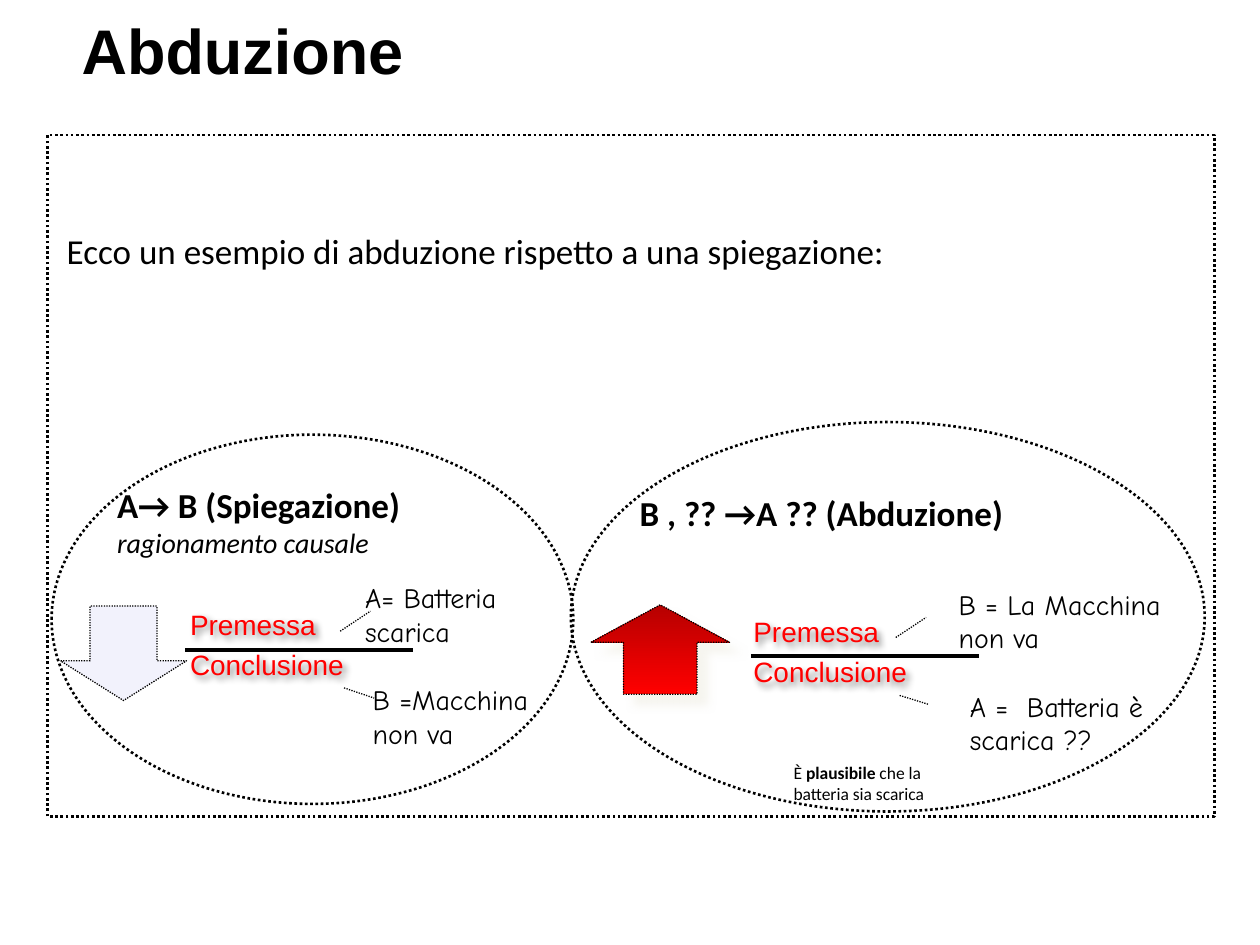
"""Build the slide that compares explanation and abduction."""
from lxml.etree import SubElement
from pptx import Presentation
from pptx.dml.color import RGBColor
from pptx.enum.dml import MSO_LINE_DASH_STYLE as Dash
from pptx.enum.shapes import MSO_CONNECTOR as Connector, MSO_SHAPE as Shape
from pptx.oxml.ns import qn
from pptx.util import Pt

BLACK = RGBColor(0x00, 0x00, 0x00)
WHITE = RGBColor(0xFF, 0xFF, 0xFF)
RED = RGBColor(0xFF, 0x00, 0x00)
DARK_RED = RGBColor(0xB6, 0x00, 0x00)
BLUE = RGBColor(0x00, 0x00, 0xCC)
CREAM = RGBColor(0xEE, 0xEC, 0xE1)

HEADING, BODY, HAND = "Arial", "Calibri", "Comic Neue"


class Board:
    def __init__(self, slide):
        self.shapes = slide.shapes

    def shadow(self, shape, color, alpha, blur, distance):
        shape.shadow.inherit = False
        effects = shape._element.spPr.find(qn("a:effectLst"))
        outer = SubElement(effects, qn("a:outerShdw"), blurRad=str(Pt(blur)),
                           dist=str(Pt(distance)), dir="2700000", algn="ctr", rotWithShape="0")
        tint = SubElement(outer, qn("a:srgbClr"), val=str(color))
        SubElement(tint, qn("a:alpha"), val=str(alpha * 1000))

    def outlined(self, kind, box, width=1.5, fill=None, alpha=100):
        shape = self.shapes.add_shape(kind, *map(Pt, box))
        shape.shadow.inherit = False
        shape.line.color.rgb = BLACK
        shape.line.width = Pt(width)
        shape.line.dash_style = Dash.ROUND_DOT
        if fill is None:
            shape.fill.background()
        else:
            shape.fill.solid()
            shape.fill.fore_color.rgb = fill
            tint = shape._element.spPr.find(qn("a:solidFill"))[0]
            SubElement(tint, qn("a:alpha"), val=str(alpha * 1000))
        return shape

    def arrow(self, kind, box, fill=None, alpha=100):
        arrow = self.outlined(kind, box, 0.75, fill, alpha)
        arrow.adjustments[0], arrow.adjustments[1] = 0.53, 0.42
        return arrow

    def line(self, start, end, width=0.75, dash=Dash.ROUND_DOT):
        line = self.shapes.add_connector(Connector.STRAIGHT, *map(Pt, start + end))
        line.line.color.rgb = BLACK
        line.line.width = Pt(width)
        line.line.dash_style = dash
        SubElement(line._element.spPr, qn("a:effectLst"))

    def text(self, box, lines, size, font, color=BLACK, bold=None, space=0):
        """Write lines of text, with the parts between ** marks in bold."""
        label = self.shapes.add_textbox(*map(Pt, box))
        frame = label.text_frame
        frame.word_wrap = True
        for index, content in enumerate(lines):
            paragraph = frame.add_paragraph() if index else frame.paragraphs[0]
            paragraph.space_before = Pt(space)
            paragraph.font.size = Pt(size)
            paragraph.font.name = font
            paragraph.font.color.rgb = color
            paragraph.font.bold = bold
            for part, words in enumerate(content.split("**")):
                run = paragraph.add_run()
                run.text = words
                if part % 2:
                    run.font.bold = True
        return label

    def inference(self, left, top, bar_left, bar_top):
        self.line((bar_left, bar_top), (bar_left + 130.3, bar_top), 2.25, Dash.SOLID)
        steps = self.text((left, top, 215, 79), ["Premessa", "Conclusione"],
                          16, HEADING, RED, space=3.7)
        self.shadow(steps, BLACK, 50, 4, 3)

    def note(self, left, top, width, words):
        self.text((left, top, width, 46), [words], 16, HAND)


def main():
    deck = Presentation()
    deck.slide_width, deck.slide_height = Pt(720), Pt(540)
    board = Board(deck.slides.add_slide(deck.slide_layouts[6]))

    board.outlined(Shape.RECTANGLE, (27.2, 77.2, 666.7, 389.5), fill=WHITE, alpha=70)
    board.text((39.6, 2.9, 587.5, 50.4), ["Abduzione"], 36, HEADING, bold=True)
    board.text((31, 127.4, 656.6, 55.5),
               ["Ecco un esempio di abduzione rispetto a una spiegazione:"], 20, BODY)

    board.inference(423.4, 347.8, 429.1, 375.1)
    up = board.arrow(Shape.UP_ARROW, (337.7, 345.6, 79.2, 51.1))
    up.fill.gradient()
    up.fill.gradient_angle = 270
    for stop, color in zip(up.fill.gradient_stops, (DARK_RED, RED)):
        stop.color.rgb = color
    board.shadow(up, CREAM, 50, 5, 8.5)
    board.arrow(Shape.DOWN_ARROW, (34.6, 346.3, 72, 54), BLUE, 5)
    board.inference(101.5, 343.4, 105.8, 371.5)

    for start, end in (
        ((511.9, 364.3), (529.2, 352.8)),
        ((514.1, 397.4), (530.6, 402.5)),
        ((194.4, 360.7), (211.7, 349.2)),
        ((196.6, 393.1), (213.8, 398.9)),
    ):
        board.line(start, end)

    board.note(547.2, 390.2, 118.1, "A =  Batteria è scarica ??")
    board.note(540.7, 331.9, 136.1, "B = La Macchina non va")
    board.note(205.9, 386.6, 108, "B =Macchina non va")
    board.note(201.6, 328.3, 108, "A= Batteria scarica")

    explanation = board.text((59.8, 272.9, 241.9, 50.4),
                             ["A→ B (Spiegazione)", "ragionamento causale"], 20, BODY, bold=True)
    causal = explanation.text_frame.paragraphs[1].font
    causal.size, causal.bold, causal.italic = Pt(16), False, True
    board.text((358.4, 277.2, 299, 31), ["B , ?? →A ?? (Abduzione)"], 20, BODY, bold=True)

    board.outlined(Shape.OVAL, (29.5, 248.4, 298.1, 211))
    board.outlined(Shape.OVAL, (326.2, 241.2, 362.2, 222.5))
    board.text((446.4, 432, 116.6, 31),
               ["È **plausibile** che la batteria sia scarica"], 10, BODY)

    deck.save("out.pptx")


if __name__ == "__main__":
    main()
